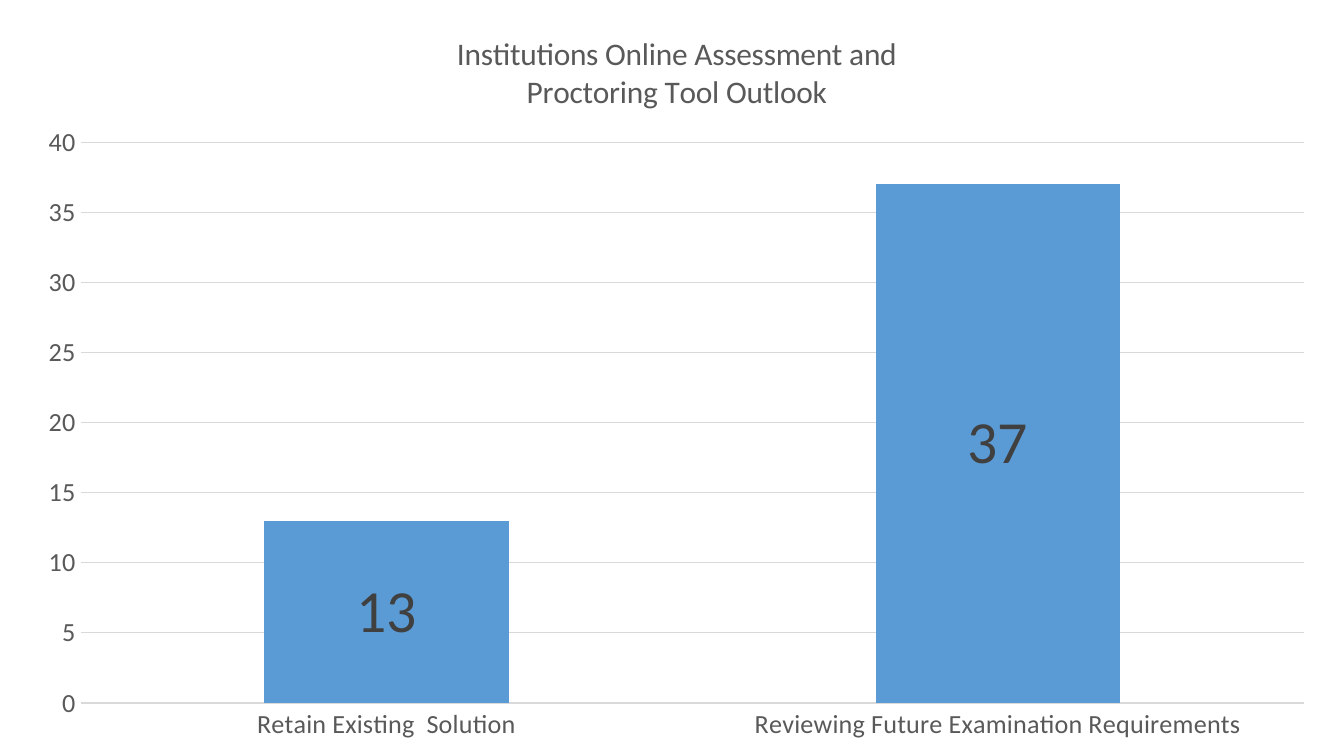
from pptx import Presentation
from pptx.chart.data import CategoryChartData
from pptx.dml.color import RGBColor
from pptx.enum.chart import XL_CHART_TYPE as ChartType
from pptx.enum.chart import XL_LABEL_POSITION as LabelPosition
from pptx.enum.chart import XL_TICK_MARK as TickMark
from pptx.oxml import parse_xml
from pptx.oxml.ns import nsdecls, qn
from pptx.util import Cm, Pt

BLACK = RGBColor(0x00, 0x00, 0x00)
DARK_GREY = RGBColor(0x40, 0x40, 0x40)
GREY = RGBColor(0x59, 0x59, 0x59)
LIGHT_GREY = RGBColor(0xD9, 0xD9, 0xD9)
BLUE = RGBColor(0x5B, 0x9B, 0xD5)

SLIDE_WIDTH, SLIDE_HEIGHT = Cm(25.4), Cm(14.28)
CHART_LEFT, CHART_WIDTH = Cm(0.41), Cm(24.71)
TITLE_LINES = ("Institutions Online Assessment and", "Proctoring Tool Outlook")
OUTLOOK = {
    "Retain Existing  Solution": 13,
    "Reviewing Future Examination Requirements": 37,
}


def set_attributes(target, values):
    for name, value in values.items():
        setattr(target, name, value)


def format_font(font, size, color):
    set_attributes(font, {"name": "Calibri", "size": Pt(size), "bold": False})
    font.color.rgb = color


def format_line(line):
    line.color.rgb = LIGHT_GREY
    line.width = Pt(0.75)


def place_part(element, position, inner=False):
    target = '<c:layoutTarget val="inner"/>' if inner else ""
    modes = "".join(f'<c:{name}Mode val="edge"/>' for name in ("x", "y"))
    totals = {"x": CHART_WIDTH, "y": SLIDE_HEIGHT, "w": CHART_WIDTH, "h": SLIDE_HEIGHT}
    values = "".join(
        f'<c:{name} val="{length / totals[name]:.4f}"/>'
        for name, length in position.items()
    )
    layout = parse_xml(
        f'<c:layout {nsdecls("c")}><c:manualLayout>{target}{modes}{values}'
        "</c:manualLayout></c:layout>"
    )
    existing = element.find(qn("c:layout"))
    if existing is None:
        element.insert(0, layout)
    else:
        element.replace(existing, layout)


def add_column_chart(slide):
    data = CategoryChartData()
    data.categories = list(OUTLOOK)
    data.add_series("Series 1", list(OUTLOOK.values()))
    frame = slide.shapes.add_chart(
        ChartType.COLUMN_STACKED, CHART_LEFT, 0, CHART_WIDTH, SLIDE_HEIGHT, data
    )
    chart = frame.chart
    chart.has_legend = False
    format_font(chart.font, 14, BLACK)
    return chart


def format_title(chart):
    text_frame = chart.chart_title.text_frame
    text_frame.text = "\n".join(TITLE_LINES)
    for paragraph in text_frame.paragraphs:
        format_font(paragraph.font, 16.8, GREY)
        for run in paragraph.runs:
            format_font(run.font, 16.8, GREY)
    title = chart.element.find(".//" + qn("c:title"))
    place_part(title, {"x": Cm(8.15), "y": Cm(0.55)})


def format_axes(chart):
    for axis in (chart.category_axis, chart.value_axis):
        set_attributes(
            axis,
            {"major_tick_mark": TickMark.NONE, "minor_tick_mark": TickMark.NONE},
        )
        format_font(axis.tick_labels.font, 14, GREY)
    format_line(chart.category_axis.format.line)
    value_axis = chart.value_axis
    set_attributes(
        value_axis,
        {
            "minimum_scale": 0,
            "maximum_scale": 40,
            "major_unit": 5,
            "has_major_gridlines": True,
        },
    )
    value_axis.format.line.fill.background()
    format_line(value_axis.major_gridlines.format.line)


def format_columns(chart):
    plot = chart.plots[0]
    set_attributes(plot, {"gap_width": 150, "overlap": 100, "vary_by_categories": False})
    series = plot.series[0]
    series.format.fill.solid()
    series.format.fill.fore_color.rgb = BLUE
    labels = series.data_labels
    set_attributes(labels, {"show_value": True, "position": LabelPosition.CENTER})
    format_font(labels.font, 32, DARK_GREY)
    plot_area = chart.element.find(".//" + qn("c:plotArea"))
    position = {"x": Cm(1.12), "y": Cm(2.69), "w": Cm(23.11), "h": Cm(10.59)}
    place_part(plot_area, position, inner=True)


def main():
    presentation = Presentation()
    set_attributes(
        presentation, {"slide_width": SLIDE_WIDTH, "slide_height": SLIDE_HEIGHT}
    )
    slide = presentation.slides.add_slide(presentation.slide_layouts[6])
    chart = add_column_chart(slide)
    format_title(chart)
    format_axes(chart)
    format_columns(chart)
    presentation.save("out.pptx")


if __name__ == "__main__":
    main()
